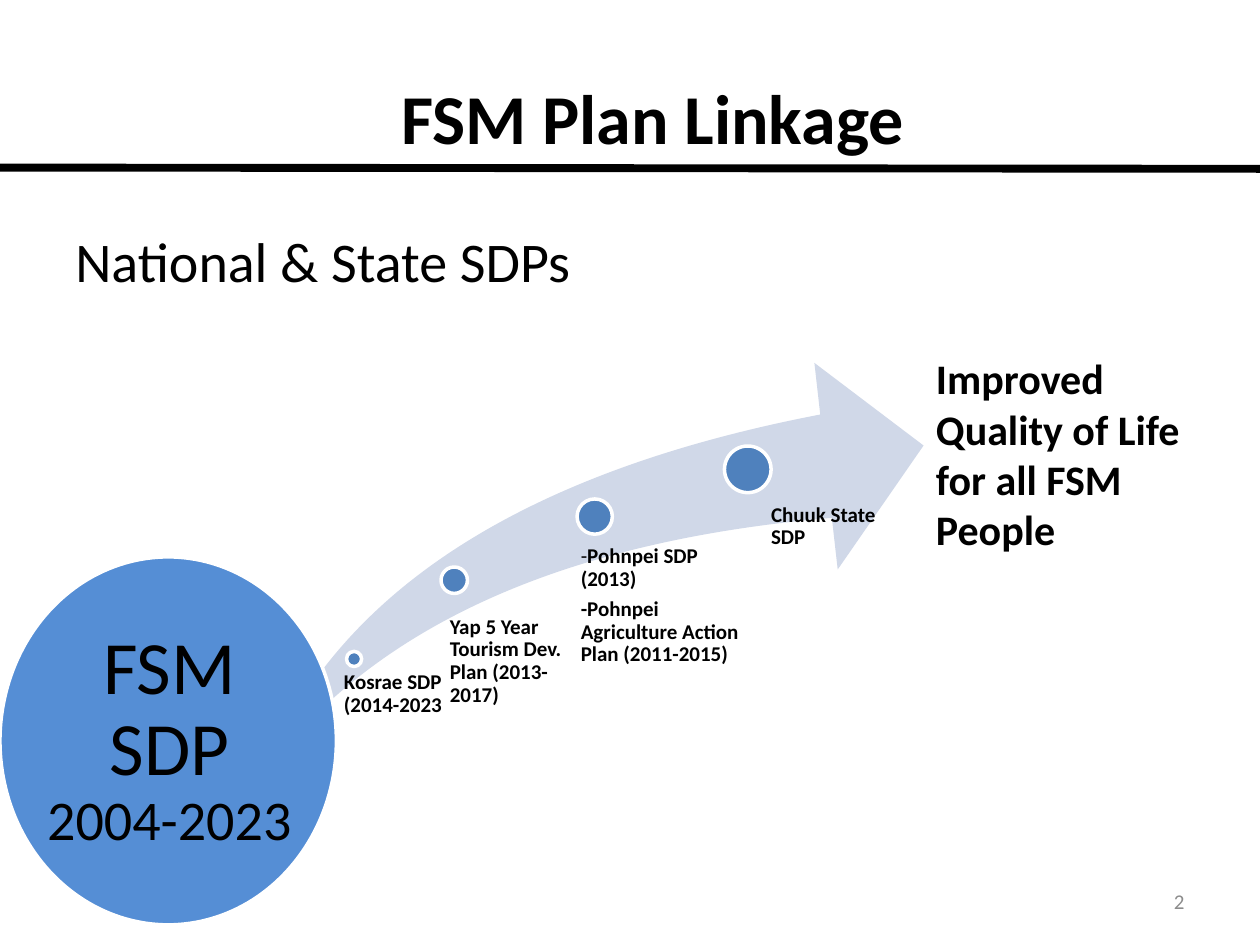
"""Builds the FSM Plan Linkage slide, with state plans along a rising arrow."""
from lxml import etree
from pptx import Presentation
from pptx import util as u
from pptx.dml.color import RGBColor
from pptx.enum import shapes, text

BLACK = RGBColor(0, 0, 0)
WHITE = RGBColor(255, 255, 255)
GRAY = RGBColor(0x8C, 0x8C, 0x8C)
PALE_BLUE = RGBColor(0xD0, 0xD8, 0xE8)
DOT_BLUE = RGBColor(0x4F, 0x81, 0xBD)
CIRCLE_BLUE = RGBColor(0x55, 0x8E, 0xD5)

TITLE = "FSM Plan Linkage"
SUBTITLE = "National & State SDPs"
GOAL = "Improved Quality of Life for all FSM People"
NATIONAL_PLAN = [[("FSM SDP ", 43, False), ("2004-2023", 32, False)]]
STATE_PLANS = [
    {"dot": (2.75, 5.17, 0.12), "label": (2.67, 5.33, 0.9, 0.78), "inset": 0.06,
     "lines": [[("Kosrae SDP (2014-2023", 12, True)]]},
    {"dot": (3.5, 4.5, 0.21), "label": (3.42, 4.89, 1.1, 1.53), "inset": 0.15,
     "lines": [[("Yap 5 Year Tourism Dev. Plan (2013-2017)", 12, True)]]},
    {"dot": (4.58, 3.96, 0.28), "label": (4.5, 4.33, 1.4, 1.17), "inset": 0.11,
     "lines": [[("-", 12, False), ("Pohnpei SDP (2013)", 12, True)],
               [("-Pohnpei Agriculture Action Plan (2011-2015)", 12, True)]]},
    {"dot": (5.75, 3.54, 0.37), "label": (5.92, 4, 1.1, 0.56), "inset": 0.2,
     "lines": [[("Chuuk State SDP", 12, True)]]},
]


def inches(box):
    return [u.Inches(value) for value in box]


def write(frame, lines, margins=(0.1, 0.05, 0.1, 0.05), color=BLACK,
          align=text.PP_ALIGN.LEFT, anchor=text.MSO_ANCHOR.TOP, tight=False):
    frame.word_wrap = True
    frame.auto_size = text.MSO_AUTO_SIZE.NONE
    frame.vertical_anchor = anchor
    (frame.margin_left, frame.margin_top,
     frame.margin_right, frame.margin_bottom) = inches(margins)
    for index, runs in enumerate(lines):
        paragraph = frame.add_paragraph() if index else frame.paragraphs[0]
        paragraph.alignment = align
        if tight:
            paragraph.line_spacing = 0.9
            paragraph.space_after = u.Pt(4.2)
        paragraph.font.name = "Calibri"
        paragraph.font.color.rgb = color
        if len({run[1:] for run in runs}) == 1:
            paragraph.font.size = u.Pt(runs[0][1])
            paragraph.font.bold = runs[0][2]
        for words, size, bold in runs:
            run = paragraph.add_run()
            run.text = words
            if len(runs) > 1:
                run.font.size = u.Pt(size)
                run.font.bold = bold


def add_text(slide, box, lines, **style):
    write(slide.shapes.add_textbox(*inches(box)).text_frame, lines, **style)


def add_filled(slide, preset, box, fill, outlined=False):
    shape = slide.shapes.add_shape(preset, *inches(box))
    shape.shadow.inherit = False
    shape.fill.solid()
    shape.fill.fore_color.rgb = fill
    if outlined:
        shape.line.color.rgb = WHITE
        shape.line.width = u.Pt(2)
    else:
        shape.line.fill.background()
    return shape


def add_title(slide):
    title = slide.shapes.title
    title.left, title.top, title.width, title.height = inches((0.5, 0.3, 9, 1.25))
    title.fill.solid()
    title.fill.fore_color.rgb = WHITE
    write(title.text_frame, [[(TITLE, 40, True)]], margins=(0.46, 0.05, 0.1, 0.05),
          align=text.PP_ALIGN.CENTER, anchor=text.MSO_ANCHOR.MIDDLE)
    rule = slide.shapes.add_connector(
        shapes.MSO_CONNECTOR.STRAIGHT, *inches((0, 1.33, 10, 1.34)))
    rule.line.color.rgb = BLACK
    rule.line.width = u.Pt(4.5)
    properties = rule.element.spPr
    etree.SubElement(
        properties, "{http://schemas.openxmlformats.org/drawingml/2006/main}effectLst")


def add_roadmap(slide):
    preset = shapes.MSO_SHAPE
    arrow = add_filled(slide, preset.SWOOSH_ARROW, (2.08, 2.88, 5.25, 3.28), PALE_BLUE)
    arrow.adjustments[0] = arrow.adjustments[1] = 0.25
    for plan in STATE_PLANS:
        left, top, size = plan["dot"]
        add_filled(slide, preset.OVAL, (left, top, size, size), DOT_BLUE, outlined=True)
        add_text(slide, plan["label"], plan["lines"],
                 margins=(plan["inset"], 0, 0, 0), tight=True)
    add_filled(slide, preset.OVAL, (0, 4.42, 2.67, 2.92), CIRCLE_BLUE, outlined=True)
    national = add_filled(slide, preset.RECTANGLE, (0.31, 5, 2.07, 1.76), CIRCLE_BLUE)
    write(national.text_frame, NATIONAL_PLAN, margins=(0.03,) * 4, tight=True,
          align=text.PP_ALIGN.CENTER, anchor=text.MSO_ANCHOR.MIDDLE)
    add_text(slide, (7.33, 2.75, 2.25, 1.72), [[(GOAL, 24, True)]])


def main():
    deck = Presentation()
    deck.slide_width, deck.slide_height = inches((10, 7.5))
    slide = deck.slides.add_slide(deck.slide_layouts[5])
    add_title(slide)
    add_text(slide, (0.5, 1.75, 9, 0.8), [[(SUBTITLE, 32, False)]])
    add_roadmap(slide)
    add_text(slide, (7.17, 6.95, 2.33, 0.4), [[("2", 12, False)]], color=GRAY,
             align=text.PP_ALIGN.RIGHT, anchor=text.MSO_ANCHOR.MIDDLE)
    deck.save("out.pptx")


if __name__ == "__main__":
    main()
